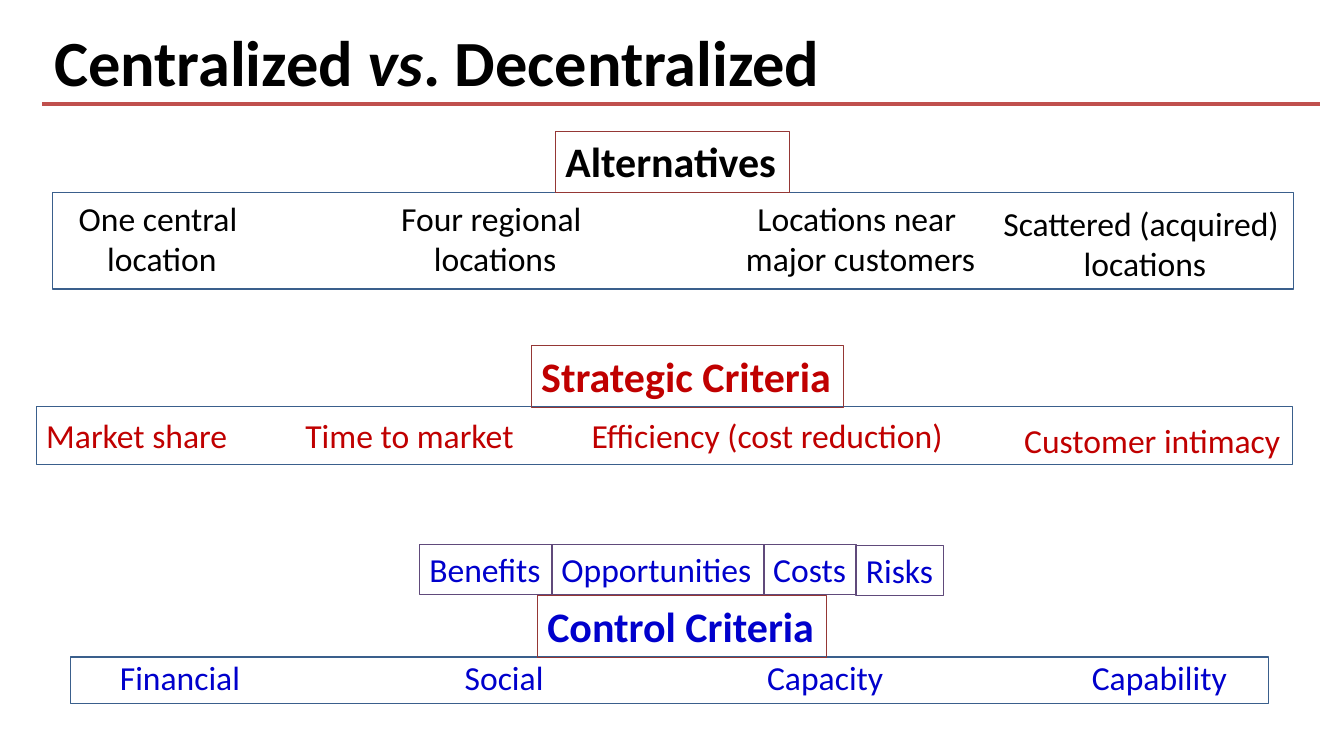
from lxml.etree import SubElement
from pptx import Presentation
from pptx.dml.color import RGBColor
from pptx.enum.shapes import MSO_CONNECTOR, MSO_SHAPE
from pptx.enum.text import MSO_AUTO_SIZE, PP_ALIGN
from pptx.oxml.ns import qn
from pptx.util import Inches, Pt

COLORS = {
    "black": "000000",
    "red": "C00000",
    "blue": "0000CC",
    "heading_edge": "953735",
    "frame_edge": "3A5F8C",
    "merit_edge": "604A7B",
    "rule": "C0504D",
}
FORMATS = {
    "title": {"name": "Calibri", "size": Pt(46), "bold": True},
    "heading": {"name": "Calibri", "size": Pt(30), "bold": True},
    "item": {"name": "Calibri", "size": Pt(24), "bold": False},
}
FRAME_LAYOUT = {"auto_size": MSO_AUTO_SIZE.SHAPE_TO_FIT_TEXT, "word_wrap": False}


class SlideBuilder:
    def __init__(self, slide):
        self.slide = slide

    def color(self, name):
        return RGBColor.from_string(COLORS[name])

    def outline(self, line, color, width):
        line.color.rgb = self.color(color)
        line.width = Pt(width)

    def text(self, box, lines, style, color, align=PP_ALIGN.LEFT, edge=None):
        label = self.slide.shapes.add_textbox(*map(Inches, box))
        if edge:
            self.outline(label.line, edge, 0.75)
        frame = label.text_frame
        for attribute, value in FRAME_LAYOUT.items():
            setattr(frame, attribute, value)
        for index, runs in enumerate(lines):
            paragraph = frame.add_paragraph() if index else frame.paragraphs[0]
            paragraph.alignment = align
            for words, italic in runs:
                run = paragraph.add_run()
                run.text = words
                for attribute, value in FORMATS[style].items():
                    setattr(run.font, attribute, value)
                run.font.italic = italic
                run.font.color.rgb = self.color(color)

    def label(self, box, words, style, color, align=PP_ALIGN.LEFT, edge=None):
        lines = [[(line, False)] for line in words.split("\n")]
        self.text(box, lines, style, color, align, edge)

    def frame(self, box):
        border = self.slide.shapes.add_shape(MSO_SHAPE.RECTANGLE, *map(Inches, box))
        border.shadow.inherit = False
        border.fill.background()
        self.outline(border.line, "frame_edge", 1)

    def rule(self, left, right, y):
        line = self.slide.shapes.add_connector(
            MSO_CONNECTOR.STRAIGHT, Inches(left), Inches(y), Inches(right), Inches(y)
        )
        self.outline(line.line, "rule", 3)
        SubElement(line._element.spPr, qn("a:effectLst"))

    def section(self, heading, heading_box, frame_box, color, align, height, items):
        self.frame(frame_box)
        self.label(heading_box, heading, "heading", color, edge="heading_edge")
        for words, left, top, width in items:
            self.label((left, top, width, height), words, "item", color, align)


SECTIONS = [
    ("Alternatives", (5.51, 1.3, 2.32, 0.61), (0.52, 1.91, 12.31, 0.96),
     "black", PP_ALIGN.CENTER, 0.91, [
         ("One central \nlocation", 0.67, 1.91, 1.87),
         ("Four regional \nlocations", 3.87, 1.91, 2.08),
         ("Locations near \nmajor customers", 7.29, 1.91, 2.49),
         ("Scattered (acquired) \nlocations", 9.78, 1.96, 3.15),
     ]),
    ("Strategic Criteria", (5.27, 3.43, 3.1, 0.61), (0.36, 4.03, 12.46, 0.58),
     "red", PP_ALIGN.LEFT, 0.5, [
         ("Market share", 0.36, 4.07, 2.02),
         ("Time to market", 2.93, 4.07, 2.28),
         ("Efficiency (cost reduction)", 5.77, 4.07, 3.73),
         ("Customer intimacy", 10.06, 4.12, 2.77),
     ]),
    ("Control Criteria", (5.33, 5.91, 2.87, 0.61), (0.7, 6.52, 11.88, 0.46),
     "blue", PP_ALIGN.LEFT, 0.5, [
         ("Financial", 1.09, 6.47, 1.41),
         ("Social", 4.51, 6.47, 0.99),
         ("Capacity", 7.51, 6.47, 1.36),
         ("Capability", 10.73, 6.47, 1.55),
     ]),
]
MERITS = [
    ("Benefits", 4.16, 5.4, 1.32),
    ("Opportunities", 5.47, 5.4, 2.11),
    ("Costs", 7.57, 5.4, 0.93),
    ("Risks", 8.49, 5.41, 0.87),
]


def main():
    deck = Presentation()
    deck.slide_width, deck.slide_height = Inches(13.33), Inches(7.5)
    builder = SlideBuilder(deck.slides.add_slide(deck.slide_layouts[6]))
    title = [("Centralized ", False), ("vs", True), (". Decentralized", False)]
    builder.text((0.44, 0.17, 7.87, 0.88), [title], "title", "black")
    builder.rule(0.42, 13.09, 1.03)
    for section in SECTIONS:
        builder.section(*section)
    for words, left, top, width in MERITS:
        builder.label((left, top, width, 0.5), words, "item", "blue", edge="merit_edge")
    deck.save("out.pptx")


if __name__ == "__main__":
    main()
